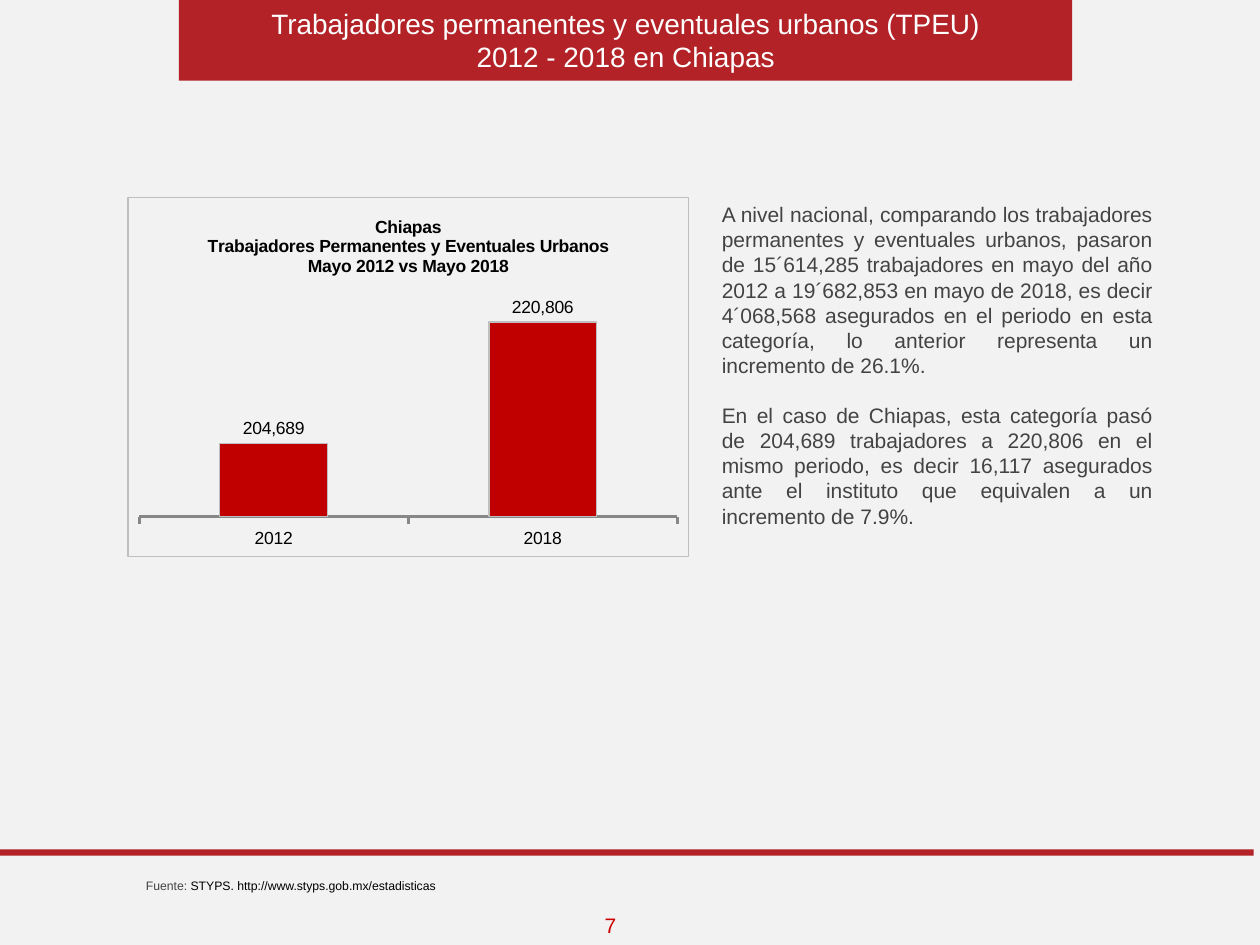
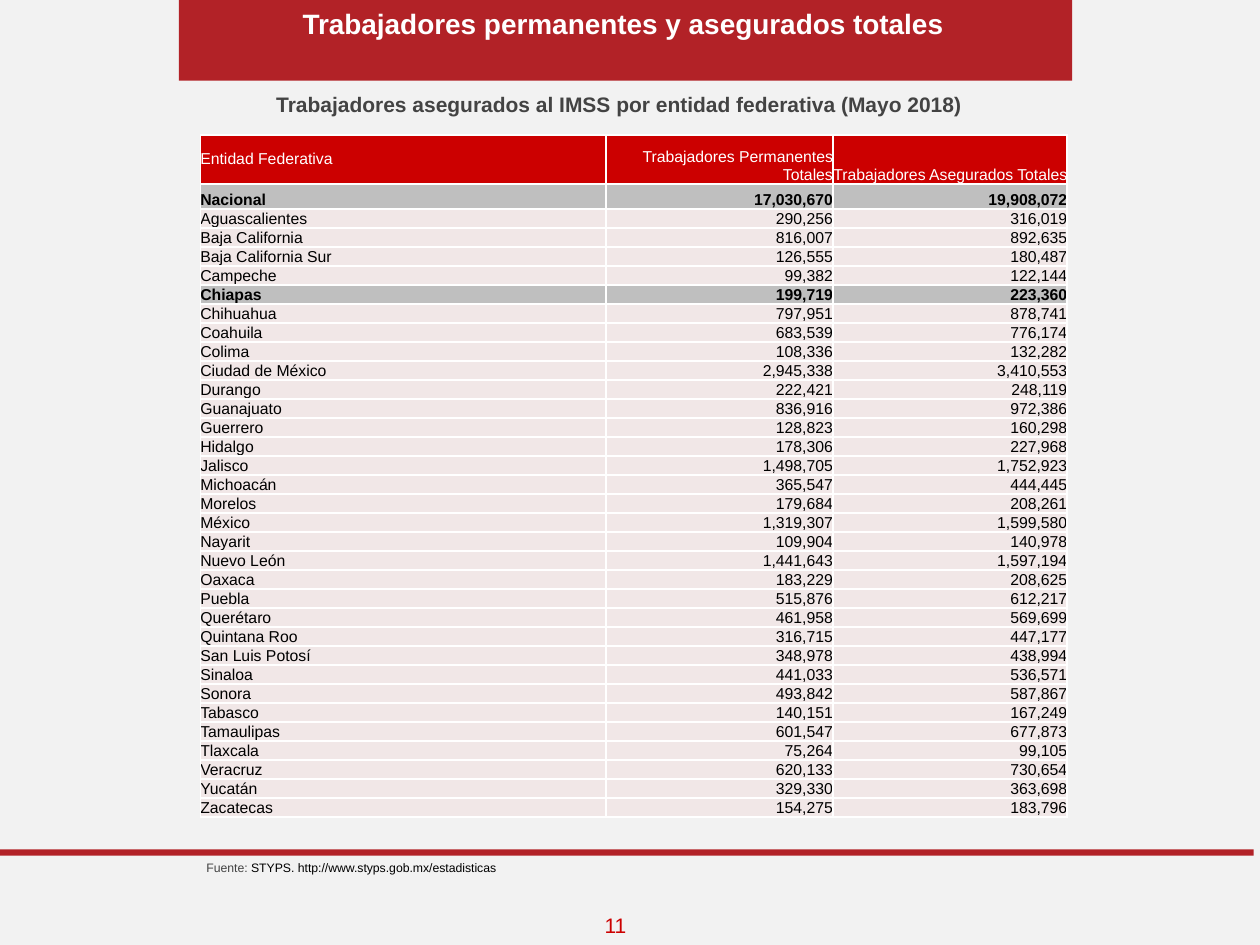
import lxml.etree
import pptx
import pptx.chart.data
import pptx.dml.color
import pptx.enum.chart
import pptx.enum.shapes
import pptx.enum.text
import pptx.oxml
import pptx.oxml.ns
import pptx.util

Inches = pptx.util.Inches
Pt = pptx.util.Pt
ALIGN = pptx.enum.text.PP_ALIGN
ANCHOR = pptx.enum.text.MSO_ANCHOR
NSDECLS = pptx.oxml.ns.nsdecls
qn = pptx.oxml.ns.qn

FONT = "Arial"
BACKGROUND, BAND, ACCENT, BAR = "F2F2F2", "B22227", "CC0000", "C00000"
WHITE, BLACK, GREY_TEXT = "FFFFFF", "000000", "434343"
HIGHLIGHT, ROW_FILL, AXIS = "BFBFBF", "F1E7E7", "878787"

NATIONAL_TEXT = (
    "A nivel nacional, comparando los trabajadores permanentes y eventuales urbanos, "
    "pasaron de 15´614,285 trabajadores en mayo del año 2012 a 19´682,853 en mayo de 2018, "
    "es decir 4´068,568 asegurados en el periodo en esta categoría, lo anterior representa "
    "un incremento de 26.1%."
)
CHIAPAS_TEXT = (
    "En el caso de Chiapas, esta categoría pasó de 204,689 trabajadores a 220,806 en el "
    "mismo periodo, es decir 16,117 asegurados ante el instituto que equivalen a un "
    "incremento de 7.9%."
)
CHART_TITLE = (
    "Chiapas\nTrabajadores Permanentes y Eventuales Urbanos\nMayo 2012 vs Mayo 2018"
)
HEADINGS = (
    "Entidad Federativa",
    "Trabajadores Permanentes Totales",
    "Trabajadores Asegurados Totales",
)
WORKERS_BY_STATE = [
    ("Nacional", 17030670, 19908072),
    ("Aguascalientes", 290256, 316019),
    ("Baja California", 816007, 892635),
    ("Baja California Sur", 126555, 180487),
    ("Campeche", 99382, 122144),
    ("Chiapas", 199719, 223360),
    ("Chihuahua", 797951, 878741),
    ("Coahuila", 683539, 776174),
    ("Colima", 108336, 132282),
    ("Ciudad de México", 2945338, 3410553),
    ("Durango", 222421, 248119),
    ("Guanajuato", 836916, 972386),
    ("Guerrero", 128823, 160298),
    ("Hidalgo", 178306, 227968),
    ("Jalisco", 1498705, 1752923),
    ("Michoacán", 365547, 444445),
    ("Morelos", 179684, 208261),
    ("México", 1319307, 1599580),
    ("Nayarit", 109904, 140978),
    ("Nuevo León", 1441643, 1597194),
    ("Oaxaca", 183229, 208625),
    ("Puebla", 515876, 612217),
    ("Querétaro", 461958, 569699),
    ("Quintana Roo", 316715, 447177),
    ("San Luis Potosí", 348978, 438994),
    ("Sinaloa", 441033, 536571),
    ("Sonora", 493842, 587867),
    ("Tabasco", 140151, 167249),
    ("Tamaulipas", 601547, 677873),
    ("Tlaxcala", 75264, 99105),
    ("Veracruz", 620133, 730654),
    ("Yucatán", 329330, 363698),
    ("Zacatecas", 154275, 183796),
]
HIGHLIGHTED = {"Nacional", "Chiapas"}


def rgb(value):
    return pptx.dml.color.RGBColor.from_string(value)


def paint(part, color):
    part.fill.solid()
    part.fill.fore_color.rgb = rgb(color)


def style_font(font, size, color, bold=False):
    font.name, font.size, font.bold = FONT, Pt(size), bold
    font.color.rgb = rgb(color)


def style_line(line, color, width):
    line.color.rgb = rgb(color)
    line.width = Pt(width)


def add_cell_borders(cell):
    properties = cell._tc.get_or_add_tcPr()
    for position, side in enumerate(("lnL", "lnR", "lnT", "lnB")):
        properties.insert(position, pptx.oxml.parse_xml(
            f'<a:{side} {NSDECLS("a")} w="12700"><a:solidFill>'
            f'<a:srgbClr val="{WHITE}"/></a:solidFill></a:{side}>'))


def frame_chart(chart):
    """Give the chart area a thin grey border and no fill."""
    chart.element.find(qn("c:chart")).addnext(pptx.oxml.parse_xml(
        f'<c:spPr {NSDECLS("c", "a")}><a:noFill/><a:ln w="9525"><a:solidFill>'
        f'<a:srgbClr val="{HIGHLIGHT}"/></a:solidFill></a:ln></c:spPr>'))


def place_plot(chart, **fractions):
    """Fix the inner plot area, in fractions of the chart size."""
    plot_area = chart.element.find(qn("c:chart")).find(qn("c:plotArea"))
    old_layout = plot_area.find(qn("c:layout"))
    if old_layout is not None:
        plot_area.remove(old_layout)
    layout = pptx.oxml.parse_xml(
        f'<c:layout {NSDECLS("c")}><c:manualLayout><c:layoutTarget val="inner"/>'
        '<c:xMode val="edge"/><c:yMode val="edge"/></c:manualLayout></c:layout>')
    for name, value in fractions.items():
        lxml.etree.SubElement(layout[0], qn(f"c:{name}")).set("val", str(value))
    plot_area.insert(0, layout)


class Report:
    """Holds the presentation, its shared look and the current slide."""

    def __init__(self):
        self.deck = pptx.Presentation()
        self.deck.slide_width, self.deck.slide_height = Inches(10), Inches(7.5)
        self.slide = None

    def start_slide(self, page):
        self.slide = self.deck.slides.add_slide(self.deck.slide_layouts[6])
        paint(self.slide.background, BACKGROUND)
        self.band(1.42, 0, 7.09, 0.64)
        self.band(0, 6.74, 9.95, 0.05)
        self.text([page], 4.7, 7.19, 0.42, 0.31, 12, ACCENT, ALIGN.LEFT)

    def band(self, left, top, width, height):
        band = self.slide.shapes.add_shape(
            pptx.enum.shapes.MSO_SHAPE.RECTANGLE,
            Inches(left), Inches(top), Inches(width), Inches(height))
        band.shadow.inherit = False
        paint(band, BAND)
        band.line.fill.background()

    def text(self, paragraphs, left, top, width, height, size, color,
             align=ALIGN.CENTER, bold=False, gap=0):
        box = self.slide.shapes.add_textbox(
            Inches(left), Inches(top), Inches(width), Inches(height))
        frame = box.text_frame
        frame.word_wrap = True
        frame.text = "\n".join(paragraphs)
        for index, paragraph in enumerate(frame.paragraphs):
            paragraph.alignment = align
            if index and gap:
                paragraph.space_before = Pt(gap)
            for run in paragraph.runs:
                style_font(run.font, size, color, bold)
        return frame

    def title(self, lines, left, bold=False):
        self.text(lines, left, 0, 7.05, 0.64, 16, WHITE, bold=bold)

    def source(self, left, top):
        frame = self.text(["Fuente: "], left, top, 2.55, 0.22, 7, GREY_TEXT, ALIGN.LEFT)
        citation = frame.paragraphs[0].add_run()
        citation.text = "STYPS. http://www.styps.gob.mx/estadisticas"
        style_font(citation.font, 7, BLACK)

    def column_chart(self, title, years, workers, left, top, width, height):
        data = pptx.chart.data.CategoryChartData(number_format="#,##0")
        data.categories = years
        data.add_series("Trabajadores", workers)
        chart = self.slide.shapes.add_chart(
            pptx.enum.chart.XL_CHART_TYPE.COLUMN_CLUSTERED,
            Inches(left), Inches(top), Inches(width), Inches(height), data).chart
        style_font(chart.font, 10, BLACK)
        chart.has_legend = False
        chart.has_title = True
        chart.chart_title.include_in_layout = False
        chart.chart_title.text_frame.text = title
        for paragraph in chart.chart_title.text_frame.paragraphs:
            style_font(paragraph.runs[0].font, 10, BLACK, bold=True)

        value_axis = chart.value_axis
        value_axis.visible = False
        value_axis.has_major_gridlines = False
        value_axis.minimum_scale, value_axis.maximum_scale = 195000, 225000
        category_axis = chart.category_axis
        category_axis.major_tick_mark = pptx.enum.chart.XL_TICK_MARK.OUTSIDE
        style_line(category_axis.format.line, AXIS, 1.75)

        plot = chart.plots[0]
        plot.gap_width = 150
        plot.vary_by_categories = False
        plot.has_data_labels = True
        labels = plot.data_labels
        labels.show_value = True
        labels.number_format, labels.number_format_is_linked = "#,##0", False
        labels.position = pptx.enum.chart.XL_LABEL_POSITION.OUTSIDE_END
        style_font(labels.font, 10, BLACK)
        columns = plot.series[0].format
        paint(columns, BAR)
        style_line(columns.line, HIGHLIGHT, 0.75)
        frame_chart(chart)
        place_plot(chart, x=0.02, y=0.26, w=0.96, h=0.63)

    def cell(self, cell, content, fill, color, bold, align, anchor):
        cell.margin_left = cell.margin_right = cell.margin_top = cell.margin_bottom = 0
        cell.vertical_anchor = anchor
        paint(cell, fill)
        add_cell_borders(cell)
        paragraph = cell.text_frame.paragraphs[0]
        paragraph.text = content
        paragraph.alignment = align
        style_font(paragraph.runs[0].font, 9, color, bold)

    def state_table(self, left, top, widths):
        heights = [0.39, 0.2] + [0.15] * (len(WORKERS_BY_STATE) - 1)
        table = self.slide.shapes.add_table(
            len(heights), len(widths), Inches(left), Inches(top),
            Inches(sum(widths)), Inches(sum(heights))).table
        table.horz_banding = False
        for column, width in zip(table.columns, widths):
            column.width = Inches(width)
        for row, height in zip(table.rows, heights):
            row.height = Inches(height)
        rows = [HEADINGS] + [
            (state, f"{permanent:,}", f"{insured:,}")
            for state, permanent, insured in WORKERS_BY_STATE]
        for r, row in enumerate(rows):
            bold = row[0] in HIGHLIGHTED
            fill = ACCENT if r == 0 else HIGHLIGHT if bold else ROW_FILL
            color = WHITE if r == 0 else BLACK
            for c, content in enumerate(row):
                self.cell(table.cell(r, c), content, fill, color, bold,
                          ALIGN.RIGHT if c else ALIGN.LEFT,
                          ANCHOR.MIDDLE if r == c == 0 else ANCHOR.BOTTOM)


def main():
    report = Report()

    report.start_slide("7")
    report.title(["Trabajadores permanentes y eventuales urbanos (TPEU)",
                  "2012 - 2018 en Chiapas"], left=1.44)
    report.text([NATIONAL_TEXT, CHIAPAS_TEXT], 5.63, 1.55, 3.62, 2.93, 12, GREY_TEXT,
                ALIGN.JUSTIFY, gap=14)
    report.source(1.06, 6.92)
    report.column_chart(CHART_TITLE, ["2012", "2018"], [204689, 220806],
                        1.01, 1.56, 4.46, 2.86)

    report.start_slide("11")
    report.text(["Trabajadores asegurados al IMSS por entidad federativa (Mayo 2018)"],
                1.57, 0.68, 6.69, 0.3, 12, GREY_TEXT, bold=True)
    report.title(["Trabajadores permanentes y asegurados totales"], left=1.42, bold=True)
    report.source(1.54, 6.78)
    report.state_table(1.59, 1.07, [3.22, 1.8, 1.86])

    report.deck.save("out.pptx")


if __name__ == "__main__":
    main()
